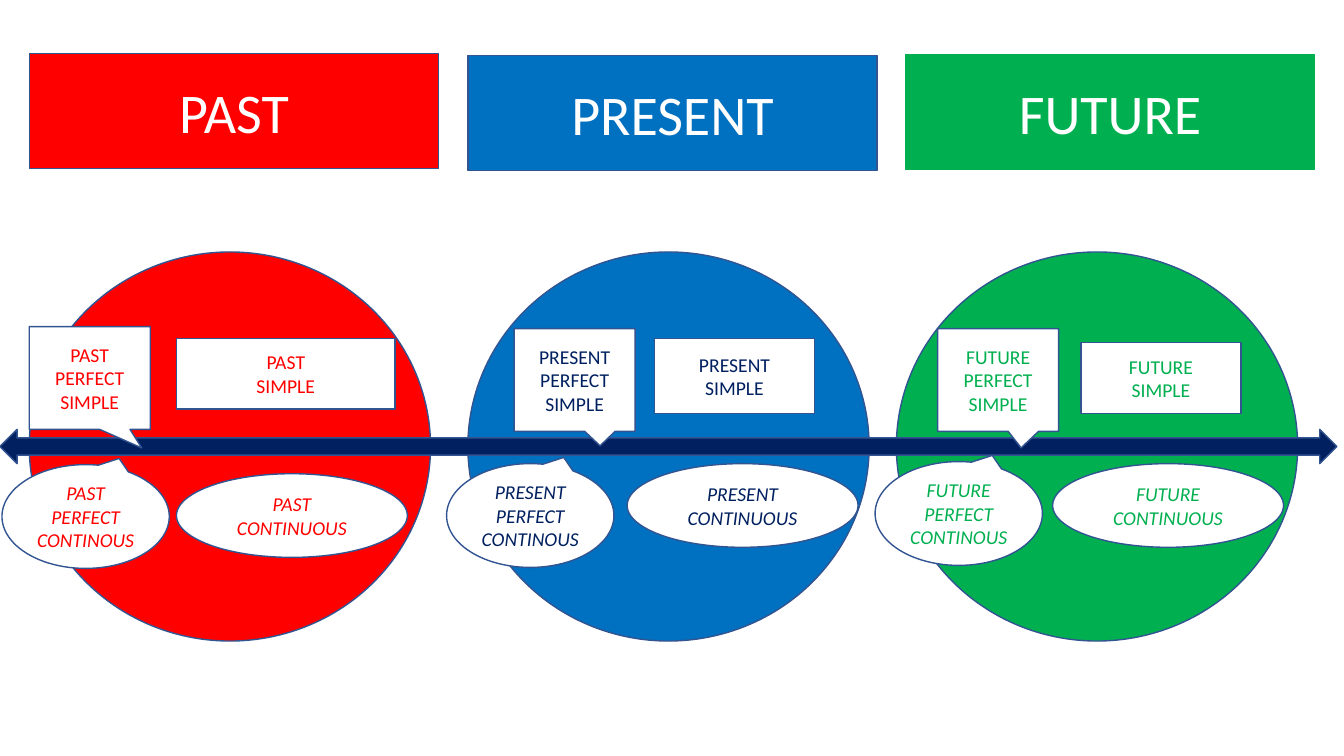
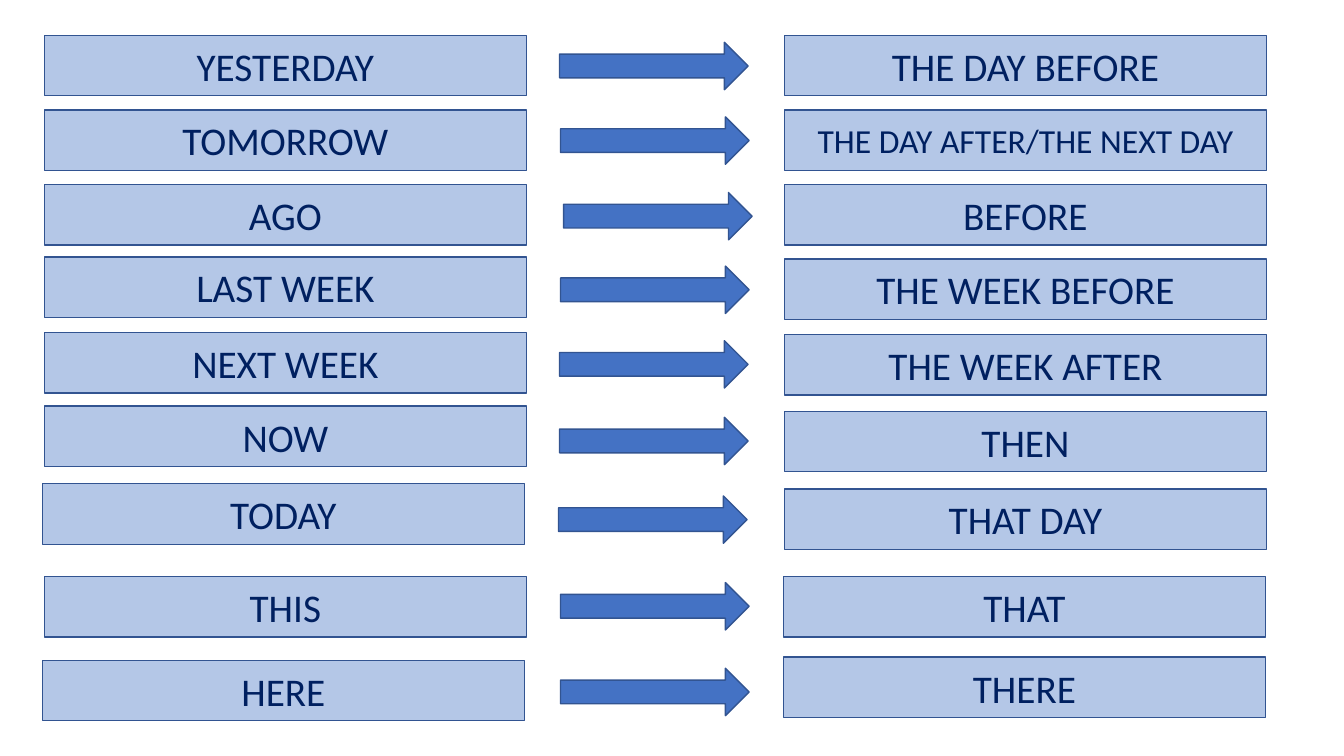
from dataclasses import dataclass

from pptx import Presentation
from pptx.dml.color import RGBColor
from pptx.enum.shapes import MSO_SHAPE
from pptx.enum.text import MSO_ANCHOR, PP_ALIGN
from pptx.shapes.autoshape import Shape
from pptx.slide import Slide
from pptx.util import Pt

PX = 9144  # EMU, 100 px to the inch
FONT = "Calibri"

WHITE = RGBColor(0xFF, 0xFF, 0xFF)
RED = RGBColor(0xFF, 0x00, 0x00)
BLUE = RGBColor(0x00, 0x70, 0xC0)
GREEN = RGBColor(0x00, 0xB0, 0x50)
NAVY = RGBColor(0x00, 0x20, 0x60)
EDGE = RGBColor(0x32, 0x54, 0x91)
PALE = RGBColor(0xB4, 0xC7, 0xE7)
MID = RGBColor(0x44, 0x72, 0xC4)

RECT = MSO_SHAPE.RECTANGLE
OVAL = MSO_SHAPE.OVAL
DISC = MSO_SHAPE.FLOWCHART_CONNECTOR
NOTE = MSO_SHAPE.RECTANGULAR_CALLOUT
CLOUD = MSO_SHAPE.OVAL_CALLOUT
RIGHT = MSO_SHAPE.RIGHT_ARROW
BOTH = MSO_SHAPE.LEFT_RIGHT_ARROW
MIDDLE = MSO_ANCHOR.MIDDLE
CENTER = PP_ALIGN.CENTER

Point = tuple[int, int]
Box = tuple[int, int, int, int]
Tip = tuple[float, float]


@dataclass(frozen=True)
class Tense:
    name: str
    fill: RGBColor
    ink: RGBColor
    edge: RGBColor
    head: Point
    disc: int
    simple: Box
    going: Point
    note: Point
    tip: Tip
    cloud: Point


@dataclass(frozen=True)
class Pair:
    """A word and its reported form, with the corners of both boxes and the arrow."""
    word: str
    left: Point
    arrow: Point
    right: Point
    told: str
    size: int = 28


TENSES = (
    Tense("PAST", RED, RED, EDGE, (29, 53), 29, (175, 336, 217, 70),
          (175, 470), (29, 324), (0.43, 0.68), (2, 461)),
    Tense("PRESENT", BLUE, NAVY, EDGE, (464, 55), 464, (649, 336, 159, 74),
          (622, 460), (510, 326), (0.21, 0.64), (443, 460)),
    Tense("FUTURE", GREEN, GREEN, GREEN, (898, 54), 889, (1072, 340, 159, 70),
          (1044, 460), (930, 326), (0.19, 0.66), (868, 458)),
)

PAIRS = (
    Pair("YESTERDAY", (44, 35), (555, 42), (778, 35), "THE DAY BEFORE"),
    Pair("TOMORROW", (44, 109), (556, 116), (778, 109),
         "THE DAY AFTER/THE NEXT DAY", 24),
    Pair("AGO", (44, 183), (559, 191), (778, 183), "BEFORE"),
    Pair("LAST WEEK", (44, 255), (556, 264), (778, 257), "THE WEEK BEFORE"),
    Pair("NEXT WEEK", (44, 330), (555, 338), (778, 332), "THE WEEK AFTER"),
    Pair("NOW", (44, 403), (555, 414), (778, 408), "THEN"),
    Pair("TODAY", (42, 480), (554, 492), (778, 485), "THAT DAY"),
    Pair("THIS", (44, 572), (556, 578), (777, 572), "THAT"),
    Pair("HERE", (42, 655), (556, 663), (777, 652), "THERE"),
)


def draw(slide: Slide, kind: MSO_SHAPE, box: Box, fill: RGBColor,
         edge: RGBColor = EDGE, tip: Tip | None = None) -> Shape:
    shape = slide.shapes.add_shape(kind, *(n * PX for n in box))
    shape.shadow.inherit = False
    shape.fill.solid()
    shape.fill.fore_color.rgb = fill
    shape.line.color.rgb = edge
    shape.line.width = Pt(1)
    if tip:
        shape.adjustments[0], shape.adjustments[1] = tip
    return shape


def write(shape: Shape, text: str, size: int, ink: RGBColor,
          slant: bool = False) -> None:
    frame = shape.text_frame
    frame.word_wrap = True
    frame.vertical_anchor = MIDDLE
    frame.text = text
    for para in frame.paragraphs:
        para.alignment = CENTER
        for run in para.runs:
            font = run.font
            font.name, font.size, font.italic = FONT, Pt(size), slant
            font.color.rgb = ink


def add_tense(slide: Slide, tense: Tense) -> None:
    name, ink = tense.name, tense.ink
    head = draw(slide, RECT, (*tense.head, 406, 114), tense.fill, tense.edge)
    write(head, name, 40, WHITE)
    simple = draw(slide, RECT, tense.simple, WHITE)
    write(simple, f"{name}\nSIMPLE", 14, ink)
    going = draw(slide, OVAL, (*tense.going, 229, 83), WHITE)
    write(going, f"{name} CONTINUOUS", 14, ink, True)
    note = draw(slide, NOTE, (*tense.note, 120, 102), WHITE, tip=tense.tip)
    write(note, f"{name} PERFECT SIMPLE", 14, ink)
    cloud = draw(slide, CLOUD, (*tense.cloud, 166, 103), WHITE,
                 tip=(0.2, -0.56))
    write(cloud, f"{name}\nPERFECT CONTINOUS", 14, ink, True)


def add_pair(slide: Slide, pair: Pair) -> None:
    word = draw(slide, RECT, (*pair.left, 478, 60), PALE)
    write(word, pair.word, 28, NAVY)
    draw(slide, RIGHT, (*pair.arrow, 187, 47), MID)
    told = draw(slide, RECT, (*pair.right, 478, 60), PALE)
    write(told, pair.told, pair.size, NAVY)


def main() -> None:
    deck = Presentation()
    deck.slide_width, deck.slide_height = 1333 * PX, 750 * PX
    blank = deck.slide_layouts[6]

    times = deck.slides.add_slide(blank)
    for tense in TENSES:
        draw(times, DISC, (tense.disc, 250, 398, 386), tense.fill)
    draw(times, BOTH, (0, 426, 1326, 34), NAVY)
    for tense in TENSES:
        add_tense(times, tense)

    words = deck.slides.add_slide(blank)
    for pair in PAIRS:
        add_pair(words, pair)

    deck.save("out.pptx")


if __name__ == "__main__":
    main()
